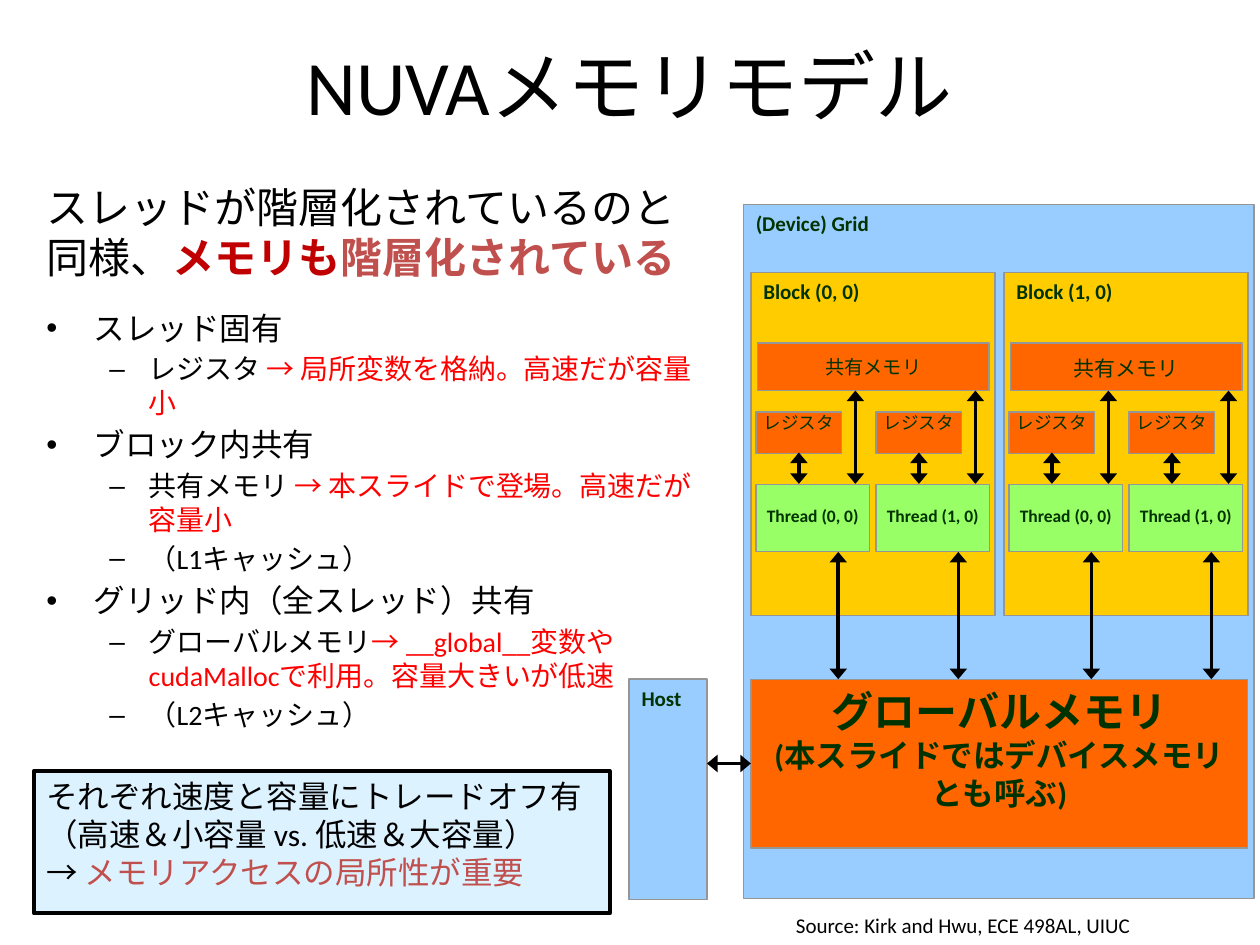
"""Build the memory model slide."""
from lxml.etree import SubElement
from pptx import Presentation
from pptx.dml.color import RGBColor
from pptx.enum.shapes import MSO_CONNECTOR as Connector, MSO_SHAPE as Shape
from pptx.enum.text import MSO_ANCHOR as Anchor, PP_ALIGN as Align
from pptx.oxml.ns import qn
from pptx.util import Pt

COLORS = {
    "black": "000000", "red": "FF0000", "crimson": "C00000", "brick": "C0504D",
    "ink": "003300", "gray": "969696", "sky": "99CCFF", "pale": "DDF2FF",
    "orange": "FF6600", "yellow": "FFCC00", "green": "99FF66",
}
FONT = "Calibri"

deck = Presentation()
deck.slide_width, deck.slide_height = Pt(720), Pt(540)
page = deck.slides.add_slide(deck.slide_layouts[6])


def add_box(area, lines, fill=None, line="gray", weight=0.75, color="ink",
            bold=False, align=Align.LEFT, insets=(7.2, 3.6, 7.2, 3.6)):
    """Add a text box or filled rectangle; each line is (size, (text, color), ...)."""
    area = [Pt(value) for value in area]
    if fill:
        box = page.shapes.add_shape(Shape.RECTANGLE, *area)
        box.shadow.inherit = False
        box.fill.solid()
        box.fill.fore_color.rgb = RGBColor.from_string(COLORS[fill])
        box.line.color.rgb = RGBColor.from_string(COLORS[line])
        box.line.width = Pt(weight)
    else:
        box = page.shapes.add_textbox(*area)
    frame = box.text_frame
    frame.word_wrap = True
    frame.vertical_anchor = Anchor.TOP
    (frame.margin_left, frame.margin_top,
     frame.margin_right, frame.margin_bottom) = [Pt(value) for value in insets]
    for index, (size, *spans) in enumerate(lines):
        para = frame.add_paragraph() if index else frame.paragraphs[0]
        para.alignment = align
        para.font.name, para.font.size, para.font.bold = FONT, Pt(size), bold
        for number, (text, *hue) in enumerate(spans):
            if number:
                span = para.add_run()
                span.text = text
                added = [span]
            else:
                para.text = text
                added = para.runs
            for span in added:
                span.font.color.rgb = RGBColor.from_string(COLORS[hue[0] if hue else color])
    return frame


def add_arrow(x1, y1, x2, y2):
    """Add a black arrow with a head at both ends."""
    arrow = page.shapes.add_connector(Connector.STRAIGHT, Pt(x1), Pt(y1), Pt(x2), Pt(y2))
    arrow.line.color.rgb = RGBColor.from_string(COLORS["black"])
    arrow.line.width = Pt(2)
    for end in ("a:headEnd", "a:tailEnd"):
        SubElement(arrow.line._get_or_add_ln(), qn(end), type="triangle", w="lg")
    SubElement(arrow._element.spPr, qn("a:effectLst"))


title = add_box((36, 8.6, 648, 80), [(44, ("NUVAメモリモデル",))],
                color="black", align=Align.CENTER)
title.vertical_anchor = Anchor.MIDDLE

topics = [
    (0, ("スレッド固有",)),
    (1, ("レジスタ ",), ("→ 局所変数を格納。高速だが容量小", "red")),
    (0, ("ブロック内共有",)),
    (1, ("共有メモリ ",), ("→ 本スライドで登場。高速だが容量小", "red")),
    (1, ("（L1キャッシュ）",)),
    (0, ("グリッド内（全スレッド）共有",)),
    (1, ("グローバルメモリ",),
     ("→ __global__変数やcudaMallocで利用。容量大きいが低速", "red")),
    (1, ("（L2キャッシュ）",)),
]
LEVELS = [(18, 27, "•"), (16, 22.5, "–")]
body = add_box((19.4, 172.8, 397.4, 240.5),
               [(LEVELS[level][0], *spans) for level, *spans in topics], color="black")
for para, (level, *_) in zip(body.paragraphs, topics):
    size, hang, mark = LEVELS[level]
    para.level = level
    para.space_before = Pt(size * 0.2)
    props = para._p.get_or_add_pPr()
    props.set("marL", str(Pt((27, 58.5)[level])))
    props.set("indent", str(-Pt(hang)))
    for tag, values in (("a:buFont", {"typeface": "Arial"}), ("a:buChar", {"char": mark})):
        props.find(qn("a:defRPr")).addprevious(SubElement(props, qn(tag), values))

source = add_box((447.8, 517.7, 235.4, 21.6),
                 [(12, ("Source: Kirk and Hwu, ECE 498AL, UIUC",))], color="black")
source.word_wrap = False

add_box((424.8, 116.8, 291.8, 396.6), [(12, ("(Device) Grid",))], "sky", bold=True)
add_box((429.1, 388.2, 283.8, 96.4),
        [(24, ("グローバルメモリ",)), (18, ("(本スライドではデバイスメモリとも呼ぶ)",))],
        "orange", bold=True, align=Align.CENTER)

for block, shared_size in enumerate((11, 12)):
    left = 429.1 + 144.6 * block
    add_box((left, 155.8, 139.5, 195.8), [(12, (f"Block ({block}, 0)",))],
            "yellow", bold=True)
    add_box((left + 3.9, 196, 132.2, 27.2), [(shared_size, ("共有メモリ",))],
            "orange", align=Align.CENTER, insets=(0, 7.2, 0, 0))
    for thread in range(2):
        start = left + 2.9 + 68.6 * thread
        add_box((start, 277, 64.8, 38), [(10, (f"Thread ({thread}, 0)",))],
                "green", bold=True, align=Align.CENTER, insets=(0, 11.5, 0, 0))
        add_box((start, 235.4, 48.8, 23.6), [(10, ("レジスタ",))],
                "orange", align=Align.CENTER, insets=(0, 0, 0, 0))
        for offset, top, bottom in ((56.8, 276.5, 223.2), (24.5, 276.5, 258.6),
                                    (47, 315.4, 388.1)):
            add_arrow(start + offset, top, start + offset, bottom)

add_box((359.5, 388, 44.6, 126), [(12, ("Host",))], "sky", bold=True)
add_arrow(404, 436.3, 429.1, 436.3)

headline = add_box((19.4, 100.1, 396.7, 65.5), [
    (24, ("スレッドが階層化されているのと同様、",), ("メモリも", "crimson"),
     ("階層化されている", "brick"))], color="black")
for span in headline.paragraphs[0].runs[1:]:
    span.font.bold = True

add_box((19.4, 440.6, 329, 81.4), [
    (18, ("それぞれ速度と容量にトレードオフ有\v（高速＆小容量 vs. 低速＆大容量）\v→ ",),
     ("メモリアクセスの局所性が重要", "brick"))],
    "pale", line="black", weight=2.25, color="black")

deck.save("out.pptx")
